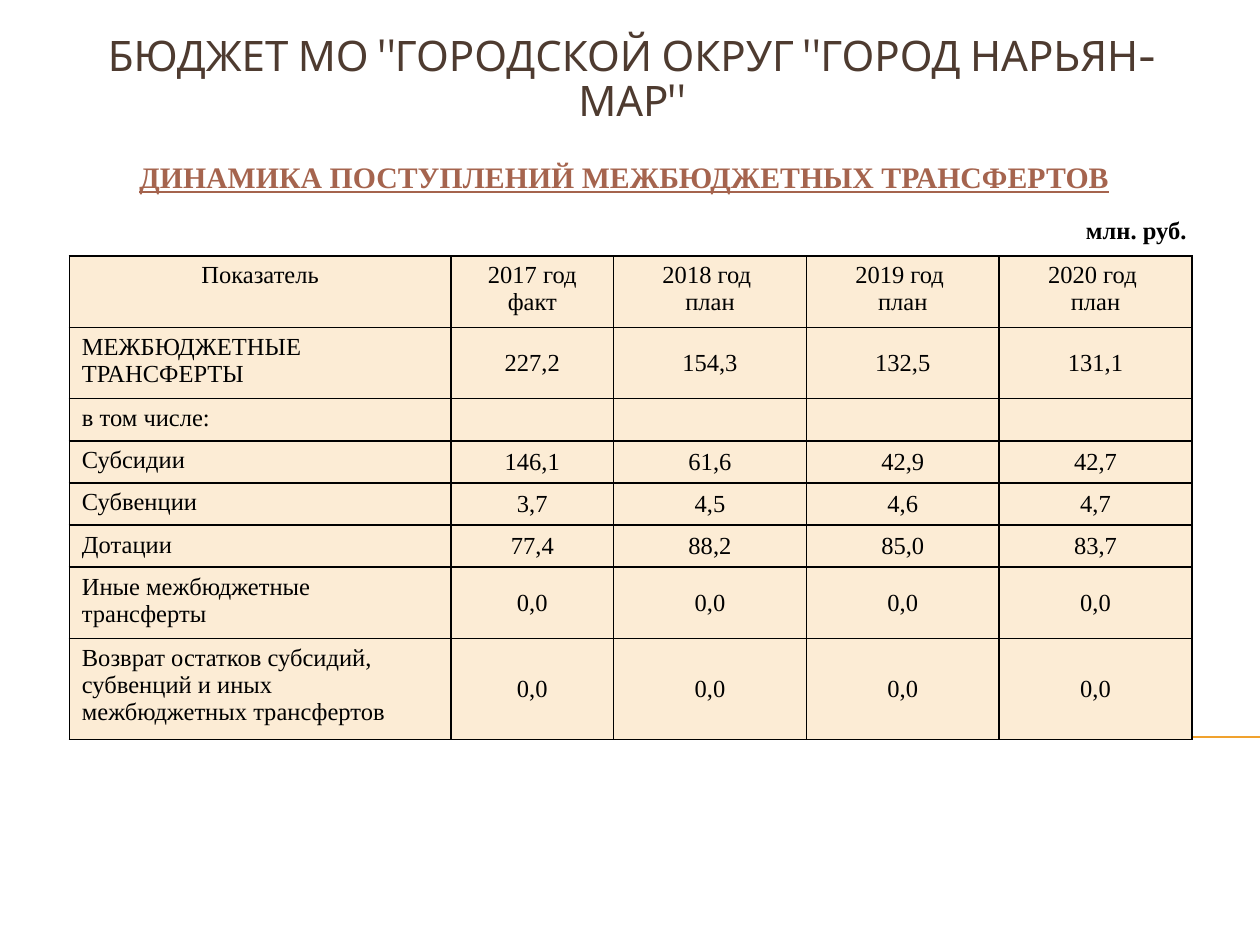
from lxml import etree
from pptx import Presentation
from pptx import util as u
from pptx.dml import color as c
from pptx.enum import shapes, text
from pptx.oxml import ns

FONT = "Times New Roman"
LEFT, CENTER = text.PP_ALIGN.LEFT, text.PP_ALIGN.CENTER
TOP, MIDDLE = text.MSO_ANCHOR.TOP, text.MSO_ANCHOR.MIDDLE


def rgb(value):
    return c.RGBColor.from_string(value)


def write(frame, content, size=14, font=FONT, color="000000", bold=False,
          underline=False, align=LEFT, anchor=TOP, spacing=1.0):
    """Fill a text frame, one paragraph for each line of content."""
    frame.word_wrap = True
    frame.vertical_anchor = anchor
    frame.text = content
    for paragraph in frame.paragraphs:
        paragraph.alignment = align
        paragraph.line_spacing = spacing
        for run in paragraph.runs:
            run.font.size = u.Pt(size)
            run.font.name = font
            run.font.bold = bold
            run.font.underline = underline
            run.font.color.rgb = rgb(color)
        if not paragraph.runs:
            etree.SubElement(paragraph._p, ns.qn("a:endParaRPr"), sz=str(size * 100))


presentation = Presentation()
presentation.slide_width = u.Inches(10)
presentation.slide_height = u.Inches(7.5)
slide = presentation.slides.add_slide(presentation.slide_layouts[6])

# The slide is a grid of 10 columns by 7.5 rows
column = presentation.slide_width / 10
row = presentation.slide_height / 7.5

rule_y = int(5.85 * row)
rule = slide.shapes.add_connector(
    shapes.MSO_CONNECTOR.STRAIGHT, int(0.56 * column), rule_y, int(10 * column), rule_y)
rule.line.color.rgb = rgb("F0A22E")
rule.line.width = u.Pt(0.75)
etree.SubElement(rule._element.spPr, ns.qn("a:effectLst"))

headings = [
    ((0.39, 0.23, 9.25, 1.34), "БЮДЖЕТ МО \"ГОРОДСКОЙ ОКРУГ \"ГОРОД НАРЬЯН-МАР\"",
     dict(size=24, font="Cabin", color="4E3B30", align=CENTER, spacing=0.9)),
    ((0.23, 1.17, 9.45, 0.47), "ДИНАМИКА ПОСТУПЛЕНИЙ МЕЖБЮДЖЕТНЫХ ТРАНСФЕРТОВ",
     dict(size=17, color="A5644E", bold=True, underline=True, align=CENTER, anchor=MIDDLE)),
    ((8.52, 1.66, 1.02, 0.64), "млн. руб.", dict(bold=True)),
]
for (left, top, width, height), content, style in headings:
    box = slide.shapes.add_textbox(
        int(left * column), int(top * row), int(width * column), int(height * row))
    write(box.text_frame, content, **style)

records = [
    ["Показатель", "2017 год факт", "2018 год \nплан", "2019 год \nплан", "2020 год \nплан"],
    ["МЕЖБЮДЖЕТНЫЕ ТРАНСФЕРТЫ", "227,2", "154,3", "132,5", "131,1"],
    ["в том числе:", "", "", "", ""],
    ["Субсидии", "146,1", "61,6", "42,9", "42,7"],
    ["Субвенции", "3,7", "4,5", "4,6", "4,7"],
    ["Дотации", "77,4", "88,2", "85,0", "83,7"],
    ["Иные межбюджетные трансферты", "0,0", "0,0", "0,0", "0,0"],
    ["Возврат остатков субсидий, субвенций и иных межбюджетных трансфертов",
     "0,0", "0,0", "0,0", "0,0"],
]
column_widths = [3.03, 1.29, 1.53, 1.53, 1.53]
one_line, two_lines, three_lines = 0.32, 0.53, 0.75
row_heights = [two_lines] * 2 + [one_line] * 4 + [two_lines, three_lines]

table = slide.shapes.add_table(
    len(records), len(column_widths), int(0.55 * column), int(2.03 * row),
    int(sum(column_widths) * column), int(sum(row_heights) * row)).table
for table_column, width in zip(table.columns, column_widths):
    table_column.width = int(width * column)
for table_row, height in zip(table.rows, row_heights):
    table_row.height = int(height * row)

for i, record in enumerate(records):
    for j, content in enumerate(record):
        cell = table.cell(i, j)
        write(cell.text_frame, content, align=CENTER if i == 0 or j else LEFT)
        cell.vertical_anchor = MIDDLE if i and j else TOP
        properties = cell._tc.get_or_add_tcPr()
        for side in ("a:lnL", "a:lnR", "a:lnT", "a:lnB"):
            border = etree.SubElement(properties, ns.qn(side), w=str(u.Pt(1)))
            fill = etree.SubElement(border, ns.qn("a:solidFill"))
            etree.SubElement(fill, ns.qn("a:srgbClr"), val="000000")
        cell.fill.solid()
        cell.fill.fore_color.rgb = rgb("FCECD5")

presentation.save("out.pptx")
